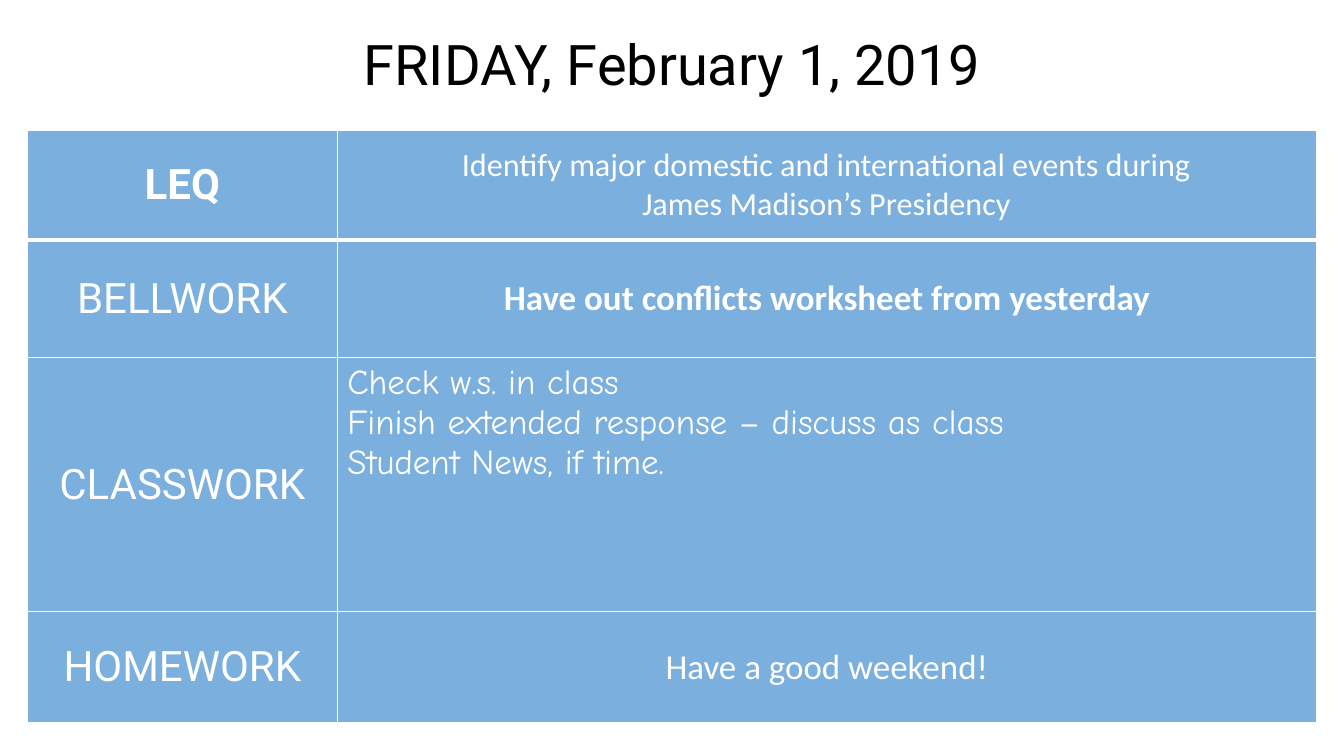
from dataclasses import dataclass
from lxml.etree import SubElement as Sub
from pptx import Presentation
from pptx.dml.color import RGBColor as Rgb
from pptx.enum.text import MSO_ANCHOR as Anchor, MSO_AUTO_SIZE as Fit, PP_ALIGN as Align
from pptx.oxml.ns import qn
from pptx.util import Pt


@dataclass(frozen=True)
class Theme:
    white: str = "FFFFFF"
    black: str = "000000"
    blue: str = "5B9BD5"
    head: str = "Roboto"
    body: str = "Calibri"
    hand: str = "Comic Neue"
    title: int = 40
    label: int = 30
    text: int = 25
    small: int = 23
    thin: int = 1
    thick: int = 3


class Deck:
    def __init__(self, theme):
        self.theme = theme
        self.show = Presentation()
        self.show.slide_width, self.show.slide_height = Pt(960), Pt(540)
        self.slide = self.show.slides.add_slide(self.show.slide_layouts[5])

    def words(self, frame, lines, face, size, color, bold=False, align=Align.CENTER):
        for i, line in enumerate(lines):
            para = frame.add_paragraph() if i else frame.paragraphs[0]
            para.alignment = align
            run = para.add_run()
            run.text = line
            font = run.font
            font.name, font.size, font.bold = face, Pt(size), bold
            font.color.rgb = Rgb.from_string(color)

    def tint(self, fill, props, color, alpha):
        fill.solid()
        fill.fore_color.rgb = Rgb.from_string(color)
        tone = props.find(qn("a:solidFill")).find(qn("a:srgbClr"))
        Sub(tone, qn("a:alpha"), val=str(alpha * 1000))

    def edge(self, props, side, width):
        line = Sub(props, qn("a:ln" + side), w=str(Pt(width)))
        fill = Sub(line, qn("a:solidFill"))
        Sub(fill, qn("a:srgbClr"), val=self.theme.white)

    def title(self, text, box):
        look, shape = self.theme, self.slide.shapes.title
        shape.left, shape.top, shape.width, shape.height = map(Pt, box)
        self.tint(shape.fill, shape._element.spPr, look.white, 65)
        frame = shape.text_frame
        frame.auto_size, frame.word_wrap = Fit.NONE, True
        frame.vertical_anchor = Anchor.MIDDLE
        self.words(frame, [text], look.head, look.title, look.black)

    def cell(self, cell, row, lines, face, size, bold=False, align=Align.CENTER):
        look = self.theme
        props = cell._tc.get_or_add_tcPr()
        wide = {"T": row == 1, "B": row == 0}
        for side in "LRTB":
            self.edge(props, side, look.thick if wide.get(side) else look.thin)
        self.tint(cell.fill, props, look.blue, 80)
        cell.vertical_anchor = Anchor.MIDDLE if align == Align.CENTER else Anchor.TOP
        self.words(cell.text_frame, lines, face, size, look.white, bold, align)

    def table(self, rows, box, cols, highs):
        look = self.theme
        grid = self.slide.shapes.add_table(len(rows), len(cols), *map(Pt, box)).table
        grid.first_row = grid.horz_banding = False
        for col, width in zip(grid.columns, cols):
            col.width = Pt(width)
        for i, (label, *task) in enumerate(rows):
            grid.rows[i].height = Pt(highs[i])
            self.cell(grid.cell(i, 0), i, [label], look.head, look.label, i == 0)
            self.cell(grid.cell(i, 1), i, *task)


def main():
    look = Theme()
    deck = Deck(look)
    cols, highs = (221.2, 699.4), (78.5, 84.2, 181.4, 79.2)
    rows = [
        ("LEQ", ["Identify major domestic and international events during",
                 "James Madison’s Presidency"], look.body, look.small),
        ("BELLWORK", ["Have out conflicts worksheet from yesterday"],
         look.body, look.text, True),
        ("CLASSWORK", ["Check w.s. in class",
                       "Finish extended response – discuss as class",
                       "Student News, if time."],
         look.hand, look.text, False, Align.LEFT),
        ("HOMEWORK", ["Have a good weekend!"], look.body, look.text),
    ]
    deck.table(rows, (19.7, 92.9, sum(cols), sum(highs)), cols, highs)
    deck.title("FRIDAY, February 1, 2019", (19.7, 9.4, sum(cols), 72))
    deck.show.save("out.pptx")


if __name__ == "__main__":
    main()
